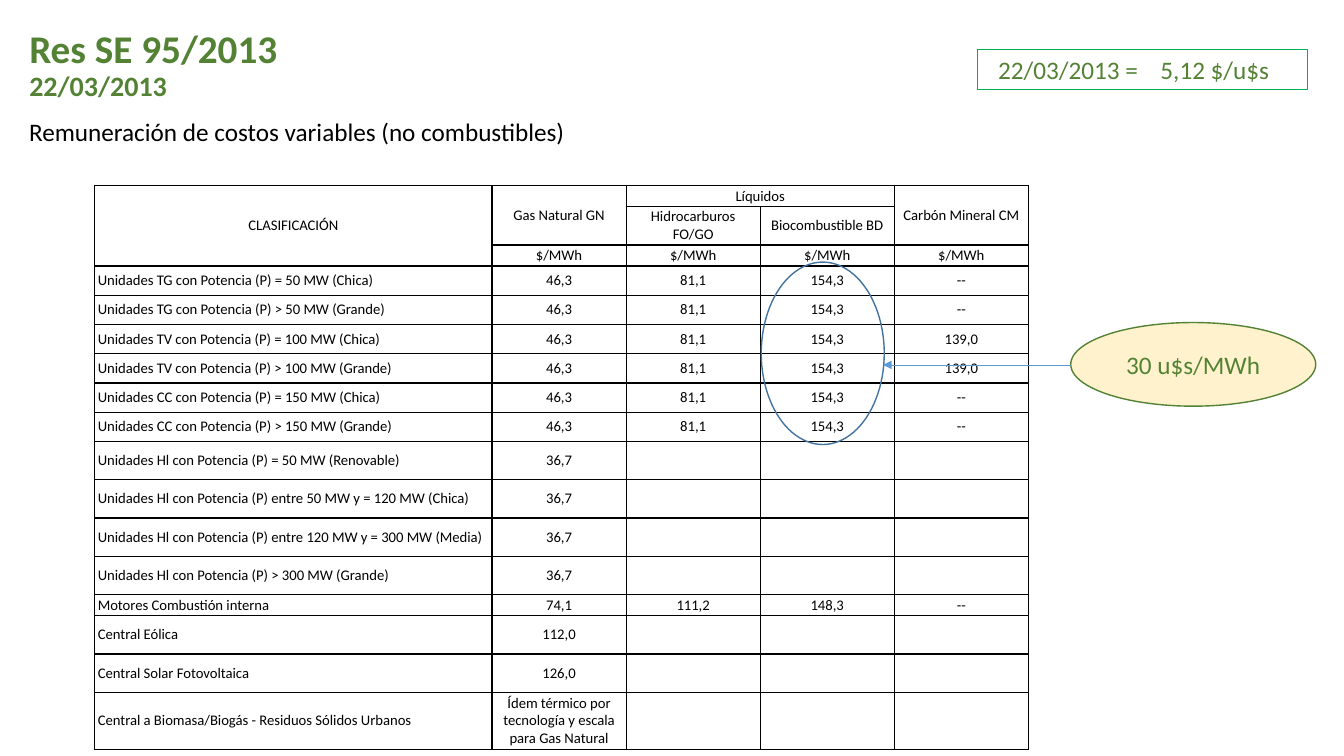
from dataclasses import dataclass

from lxml import etree
from pptx import Presentation
from pptx.dml.color import RGBColor as RGB
from pptx.enum.shapes import MSO_CONNECTOR as Connector, MSO_SHAPE as Shape
from pptx.enum.text import MSO_ANCHOR as Anchor, MSO_AUTO_SIZE as AutoSize, PP_ALIGN as Align
from pptx.oxml.ns import qn
from pptx.util import Inches, Pt


@dataclass(frozen=True)
class Theme:
    font: str = "Calibri"
    green: str = "548235"
    black: str = "000000"
    rate_line: str = "00B050"
    cream: str = "FFF2CC"
    arrow: str = "5B9BD5"
    ring: str = "43739E"
    title: float = 28
    date: float = 20
    body: float = 18
    cell: float = 10.5


THEME = Theme()
COLUMNS = [3.94] + [1.33] * 4
ROW_HEIGHTS = [0.21, 0.38, 0.21] + [0.29] * 6 + [0.38] * 4 + [0.21, 0.38, 0.38, 0.57]
HEADER = [
    ["CLASIFICACIÓN", "Gas Natural GN", "Líquidos", "", "Carbón Mineral CM"],
    ["", "", "Hidrocarburos FO/GO", "Biocombustible BD", ""],
    [""] + ["$/MWh"] * 4,
]
MERGES = [(0, 0, 2, 0), (0, 1, 1, 1), (0, 2, 0, 3), (0, 4, 1, 4)]
THERMAL = [
    ("TG", "= 50 MW (Chica)", "--"),
    ("TG", "> 50 MW (Grande)", "--"),
    ("TV", "= 100 MW (Chica)", "139,0"),
    ("TV", "> 100 MW (Grande)", "139,0"),
    ("CC", "= 150 MW (Chica)", "--"),
    ("CC", "> 150 MW (Grande)", "--"),
]
HYDRO = [
    "= 50 MW (Renovable)",
    "entre 50 MW y = 120 MW (Chica)",
    "entre 120 MW y = 300 MW (Media)",
    "> 300 MW (Grande)",
]
OTHERS = [
    ["Motores Combustión interna", "74,1", "111,2", "148,3", "--"],
    ["Central Eólica", "112,0", "", "", ""],
    ["Central Solar Fotovoltaica", "126,0", "", "", ""],
    ["Central a Biomasa/Biogás - Residuos Sólidos Urbanos",
     "Ídem térmico por tecnología y escala para Gas Natural", "", "", ""],
]


def table_rows():
    unit = "Unidades {} con Potencia (P) {}".format
    thermal = [[unit(kind, power), "46,3", "81,1", "154,3", coal] for kind, power, coal in THERMAL]
    hydro = [[unit("Hl", power), "36,7", "", "", ""] for power in HYDRO]
    return HEADER + thermal + hydro + OTHERS


def style_run(r, size, color, bold=False):
    r.font.name = THEME.font
    r.font.size = Pt(size)
    r.font.bold = bold
    r.font.color.rgb = RGB.from_string(color)


def write(tf, text, size, color, align=Align.LEFT):
    p = tf.paragraphs[0]
    p.text = text
    p.alignment = align
    for r in p.runs:
        style_run(r, size, color)
    return p


def add_title(s):
    title = s.shapes.title
    title.left, title.top = Inches(0.19), Inches(0)
    title.width, title.height = Inches(11.5), Inches(1.31)
    tf = title.text_frame
    tf.text = "Res SE 95/2013 \v22/03/2013"
    tf.vertical_anchor = Anchor.MIDDLE
    tf.auto_size = AutoSize.NONE
    p = tf.paragraphs[0]
    p.alignment = Align.LEFT
    p.line_spacing = 0.9
    for r, size in zip(p.runs, (THEME.title, THEME.date)):
        style_run(r, size, THEME.green, bold=True)


def add_borders(cell):
    tcPr = cell._tc.get_or_add_tcPr()
    for i, side in enumerate(("lnL", "lnR", "lnT", "lnB")):
        ln = etree.Element(qn("a:" + side), w=str(Pt(1)))
        fill = etree.SubElement(ln, qn("a:solidFill"))
        etree.SubElement(fill, qn("a:srgbClr"), val=THEME.black)
        tcPr.insert(i, ln)


def format_cell(cell, text, align):
    cell.margin_left = cell.margin_right = Inches(0.03)
    cell.margin_top = cell.margin_bottom = Inches(0.01)
    cell.vertical_anchor = Anchor.MIDDLE
    cell.fill.background()
    add_borders(cell)
    if text:
        write(cell.text_frame, text, THEME.cell, THEME.black, align)


def add_cost_table(s):
    rows = table_rows()
    frame = s.shapes.add_table(len(rows), len(COLUMNS), Inches(0.94), Inches(1.84),
                               Inches(sum(COLUMNS)), Inches(sum(ROW_HEIGHTS)))
    table = frame.table
    table.first_row = table.horz_banding = False
    for column, width in zip(table.columns, COLUMNS):
        column.width = Inches(width)
    for row, height in zip(table.rows, ROW_HEIGHTS):
        row.height = Inches(height)
    for top, left, bottom, right in MERGES:
        table.cell(top, left).merge(table.cell(bottom, right))
    for i, row in enumerate(rows):
        for j, text in enumerate(row):
            is_label = j == 0 and i >= len(HEADER)
            format_cell(table.cell(i, j), text, Align.JUSTIFY if is_label else Align.CENTER)


def add_outline(s, kind, box, line, width, fill=None):
    sp = s.shapes.add_shape(kind, *map(Inches, box))
    sp.shadow.inherit = False
    sp.line.color.rgb = RGB.from_string(line)
    sp.line.width = Pt(width)
    if fill:
        sp.fill.solid()
        sp.fill.fore_color.rgb = RGB.from_string(fill)
    else:
        sp.fill.background()
    return sp


def add_exchange_rate(s):
    sp = add_outline(s, Shape.RECTANGLE, (9.69, 0.49, 3.28, 0.4), THEME.rate_line, 0.75)
    tf = sp.text_frame
    tf.margin_left = Inches(0.21)
    tf.vertical_anchor = Anchor.TOP
    p = write(tf, "22/03/2013 =\t5,12 $/u$s", THEME.body, THEME.green)
    tabs = etree.SubElement(p._p.get_or_add_pPr(), qn("a:tabLst"))
    etree.SubElement(tabs, qn("a:tab"), pos=str(Inches(1.61)), algn="l")


def add_subtitle(s):
    tf = s.shapes.add_textbox(Inches(0.19), Inches(1.1), Inches(9.46), Inches(0.4)).text_frame
    tf.word_wrap = True
    write(tf, "Remuneración de costos variables (no combustibles)", THEME.body, THEME.black)


def add_callout(s):
    sp = add_outline(s, Shape.OVAL, (10.62, 3.2, 2.43, 0.83), THEME.green, 1, THEME.cream)
    sp.text_frame.vertical_anchor = Anchor.MIDDLE
    write(sp.text_frame, "30 u$s/MWh", THEME.body, THEME.green, Align.CENTER)


def add_arrow(s, start, end):
    arrow = s.shapes.add_connector(Connector.STRAIGHT, *map(Inches, start + end))
    arrow.line.color.rgb = RGB.from_string(THEME.arrow)
    arrow.line.width = Pt(0.5)
    etree.SubElement(arrow.line._get_or_add_ln(), qn("a:tailEnd"), type="triangle")
    etree.SubElement(arrow._element.spPr, qn("a:effectLst"))


def main():
    prs = Presentation()
    prs.slide_width, prs.slide_height = Inches(13.33), Inches(7.5)
    s = prs.slides.add_slide(prs.slide_layouts[5])
    add_title(s)
    add_cost_table(s)
    add_exchange_rate(s)
    add_subtitle(s)
    add_callout(s)
    add_arrow(s, (10.62, 3.62), (8.76, 3.62))
    add_outline(s, Shape.OVAL, (7.55, 2.6, 1.22, 1.81), THEME.ring, 1)
    prs.save("out.pptx")


if __name__ == "__main__":
    main()
